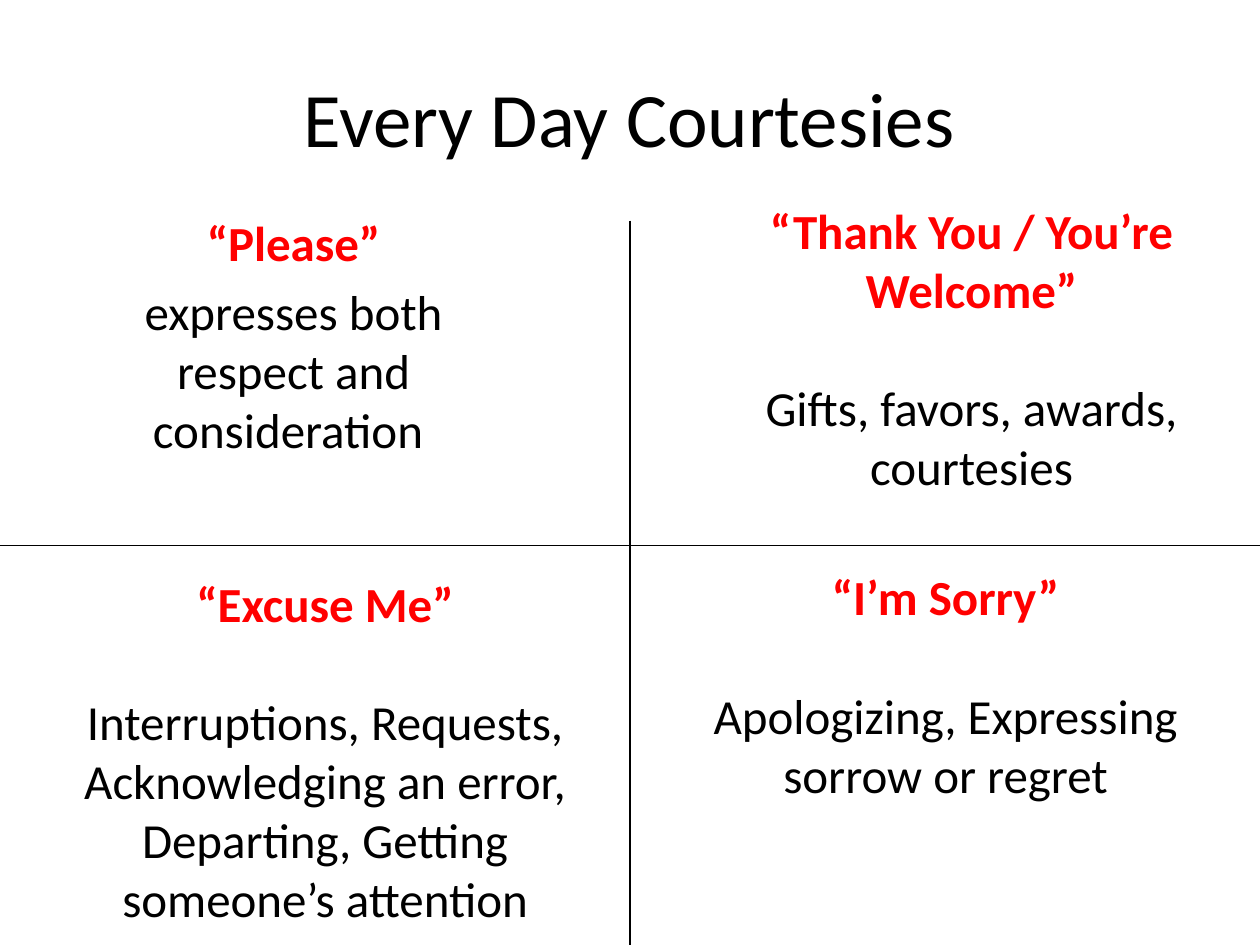
from dataclasses import dataclass

from lxml.etree import SubElement
from pptx import Presentation
from pptx.dml.color import RGBColor
from pptx.enum.shapes import MSO_CONNECTOR
from pptx.enum.text import MSO_ANCHOR, PP_ALIGN
from pptx.oxml.ns import qn
from pptx.util import Inches, Pt


@dataclass(frozen=True)
class Theme:
    font: str = "Calibri"
    text: RGBColor = RGBColor(0, 0, 0)
    accent: RGBColor = RGBColor(255, 0, 0)
    title_size: float = 44
    body_size: float = 28
    line_width: float = 0.75


THEME = Theme()
SMALL_GAP = 5.6
LINE_GAP = 34.2

# left, top, width, height, phrase, explanation, gap between them in points
COURTESIES = [
    (0.58, 1.64, 3.5, 2.58, "“Please”",
     "expresses both respect and consideration ", SMALL_GAP),
    (5.42, 1.54, 4.58, 2.46, "“Thank You / You’re Welcome”",
     "Gifts, favors, awards, courtesies", LINE_GAP),
    (0.33, 4.5, 4.5, 2.93, "“Excuse Me”",
     "Interruptions, Requests, Acknowledging an error, Departing, "
     "Getting someone’s attention", LINE_GAP),
    (5.17, 4.45, 4.67, 1.99, "“I’m Sorry”",
     "Apologizing, Expressing sorrow or regret", LINE_GAP),
]


def add_text_frame(s, left, top, width, height, anchor=MSO_ANCHOR.TOP):
    box = s.shapes.add_textbox(Inches(left), Inches(top), Inches(width), Inches(height))
    tf = box.text_frame
    tf.word_wrap = True
    tf.vertical_anchor = anchor
    return tf


def write(p, text, size, color, bold=False):
    p.text = text
    p.alignment = PP_ALIGN.CENTER
    p.font.name = THEME.font
    p.font.size = Pt(size)
    p.font.bold = bold
    p.font.color.rgb = color


def add_title(s, text):
    tf = add_text_frame(s, 1.08, 0.3, 7.83, 1.25, MSO_ANCHOR.MIDDLE)
    write(tf.paragraphs[0], text, THEME.title_size, THEME.text)


def add_courtesy(s, left, top, width, height, phrase, explanation, gap):
    tf = add_text_frame(s, left, top, width, height)
    write(tf.paragraphs[0], phrase, THEME.body_size, THEME.accent, bold=True)
    p = tf.add_paragraph()
    write(p, explanation, THEME.body_size, THEME.text)
    p.space_before = Pt(gap)


def add_divider(s, x1, y1, x2, y2):
    line = s.shapes.add_connector(
        MSO_CONNECTOR.STRAIGHT, Inches(x1), Inches(y1), Inches(x2), Inches(y2))
    line.line.color.rgb = THEME.text
    line.line.width = Pt(THEME.line_width)
    SubElement(line._element.spPr, qn("a:effectLst"))


def main():
    prs = Presentation()
    prs.slide_width, prs.slide_height = Inches(10), Inches(7.5)
    s = prs.slides.add_slide(prs.slide_layouts[6])

    add_title(s, "Every Day Courtesies")
    add_divider(s, 5, 1.75, 5, 7.5)
    add_divider(s, 0, 4.33, 10, 4.33)
    for courtesy in COURTESIES:
        add_courtesy(s, *courtesy)

    prs.save("out.pptx")


if __name__ == "__main__":
    main()
